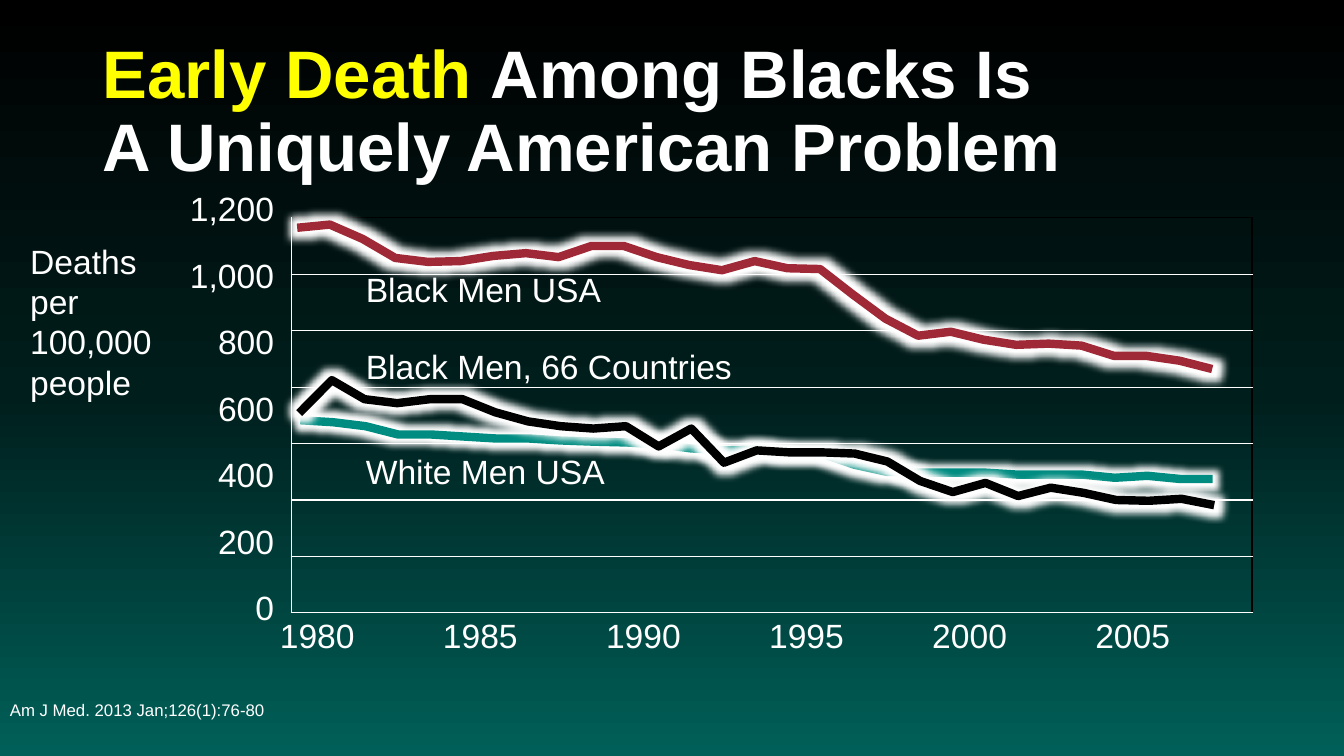
from dataclasses import dataclass
from lxml import etree
from pptx import Presentation
from pptx import util as u
from pptx.dml import color
from pptx.enum import text
from pptx.oxml import ns, parse_xml

Cm, Pt = u.Cm, u.Pt


@dataclass(frozen=True)
class Theme:
    font: str = "Arial"
    white: str = "FFFFFF"
    black: str = "000000"
    accent: str = "FFFF00"
    black_usa: str = "9F2936"
    white_usa: str = "008C81"
    background: tuple = ((0, "000000"), (52, "001E1C"), (100, "006059"))
    title: int = 48
    body: int = 24
    source: int = 12


THEME = Theme()

# Height of each yearly point, 1980 to 2008, in cm from the top of the slide
BLACK_USA = [5.74, 5.66, 6.02, 6.5, 6.6, 6.58, 6.45, 6.38, 6.48, 6.2,
             6.2, 6.48, 6.68, 6.81, 6.58, 6.76, 6.78, 7.42, 8.03, 8.46,
             8.36, 8.56, 8.69, 8.66, 8.71, 8.97, 8.97, 9.09, 9.3]
WHITE_USA = [10.59, 10.64, 10.74, 10.95, 10.95, 11, 11.05, 11.05, 11.1, 11.13,
             11.15, 11.2, 11.3, 11.35, 11.33, 11.43, 11.43, 11.71, 11.89, 11.91,
             11.91, 11.91, 11.96, 11.96, 11.96, 12.04, 11.99, 12.07, 12.07]
BLACK_66 = [10.41, 9.58, 10.06, 10.16, 10.06, 10.06, 10.39, 10.62, 10.74, 10.8,
            10.74, 11.25, 10.8, 11.66, 11.35, 11.4, 11.4, 11.43, 11.63, 12.12,
            12.4, 12.17, 12.5, 12.29, 12.42, 12.6, 12.62, 12.57, 12.73]


def rgb(value):
    return color.RGBColor.from_string(value)


def add_run(paragraph, words, size, tint=THEME.white, bold=False):
    run = paragraph.add_run()
    run.text = words
    run.font.name, run.font.size, run.font.bold = THEME.font, Pt(size), bold
    run.font.color.rgb = rgb(tint)


def paint_background(slide):
    fill = slide.background.fill
    fill.gradient()
    fill.gradient_angle = 270
    stops = slide.element.find(".//" + ns.qn("a:gsLst"))
    for stop in list(stops):
        stops.remove(stop)
    for percent, tint in THEME.background:
        stop = etree.SubElement(stops, ns.qn("a:gs"), pos=str(percent * 1000))
        etree.SubElement(stop, ns.qn("a:srgbClr"), val=tint)


def place_title(slide, left, top, width, height):
    title = slide.shapes.title
    title.left, title.top, title.width, title.height = map(Cm, (left, top, width, height))
    frame = title.text_frame
    frame.word_wrap = True
    frame.auto_size = text.MSO_AUTO_SIZE.NONE
    frame.vertical_anchor = text.MSO_ANCHOR.MIDDLE
    heading = frame.paragraphs[0]
    heading.alignment, heading.line_spacing = text.PP_ALIGN.LEFT, 0.9
    add_run(heading, "Early Death ", THEME.title, THEME.accent, True)
    add_run(heading, "Among Blacks Is", THEME.title, bold=True)
    heading.add_line_break()
    add_run(heading, "A Uniquely American Problem", THEME.title, bold=True)


def add_caption(slide, words, left, top, width, height, size=THEME.body,
                wrap=True, anchor=text.MSO_ANCHOR.TOP):
    frame = slide.shapes.add_textbox(*map(Cm, (left, top, width, height))).text_frame
    frame.word_wrap, frame.vertical_anchor = wrap, anchor
    add_run(frame.paragraphs[0], words, size)


def style_cell(cell, borders):
    """Clear the fill and set borders from a side-to-colour dict; sides left out get none."""
    properties = cell._tc.get_or_add_tcPr()
    for side in "LRTB":
        tint = borders.get(side)
        paint = (f'<a:solidFill><a:srgbClr val="{tint}"/></a:solidFill>'
                 if tint else "<a:noFill/>")
        properties.append(parse_xml(
            f'<a:ln{side} {ns.nsdecls("a")} w="12700">{paint}</a:ln{side}>'))
    cell.fill.background()


def add_plain_table(slide, rows, columns, left, top, width, height):
    table = slide.shapes.add_table(rows, columns, *map(Cm, (left, top, width, height))).table
    table.first_row = table.horz_banding = False
    return table


def add_axis(slide, labels, left, top, width, height, vertical=False):
    rows, columns = (len(labels), 1) if vertical else (1, len(labels))
    axis = add_plain_table(slide, rows, columns, left, top, width, height)
    for cell, label in zip(axis.iter_cells(), labels):
        style_cell(cell, {})
        tick = cell.text_frame.paragraphs[0]
        tick.alignment = text.PP_ALIGN.RIGHT
        add_run(tick, label, THEME.body)


def add_grid(slide, left, top, width, height):
    grid = add_plain_table(slide, 7, 1, left, top, width, height)
    for row, cell in enumerate(grid.iter_cells()):
        style_cell(cell, {"L": THEME.white, "R": THEME.black, "B": THEME.white,
                          "T": THEME.white if row else THEME.black})


def add_trend(slide, heights, tint, left, width):
    """Draw a glowing line with one evenly spaced point per year."""
    step = width / (len(heights) - 1)
    points = [(Cm(left + year * step), Cm(y)) for year, y in enumerate(heights)]
    builder = slide.shapes.build_freeform(*points[0])
    builder.add_line_segments(points[1:], close=False)
    trend = builder.convert_to_shape()
    trend.fill.background()
    trend.line.color.rgb, trend.line.width = rgb(tint), Pt(6)
    trend.shadow.inherit = False
    effects = trend.element.spPr.find(ns.qn("a:effectLst"))
    glow = etree.SubElement(effects, ns.qn("a:glow"), rad=str(Pt(10)))
    etree.SubElement(glow, ns.qn("a:srgbClr"), val=THEME.white)


def add_death_rates(slide, left, top, width, height):
    """Place the axes, grid, trends and their labels around the plot box."""
    years = [str(year) for year in range(1980, 2010, 5)]
    rates = [f"{rate:,}" for rate in range(1200, -1, -200)]
    add_caption(slide, "Deaths per 100,000 people", left - 6.83, top + 0.45, 4.57, 4.37)
    add_axis(slide, years, left - 2.26, top + height, 24.66, 1.27)
    add_axis(slide, rates, left - 3.38, top - 0.79, 3.2, 11.73, vertical=True)
    add_grid(slide, left, top, width, height)
    add_trend(slide, BLACK_USA, THEME.black_usa, left + 0.15, 23.06)
    add_trend(slide, WHITE_USA, THEME.white_usa, left + 0.23, 22.99)
    for words, drop, length in (("Black Men USA", 1.17, 6.5),
                                ("Black Men, 66 Countries", 3.1, 9.83),
                                ("White Men USA", 5.74, 6.6)):
        add_caption(slide, words, left + 1.63, top + drop, length, 1.27, wrap=False)
    add_trend(slide, BLACK_66, THEME.black, left + 0.2, 23.06)


def main():
    deck = Presentation()
    deck.slide_width, deck.slide_height = Cm(33.87), Cm(19.05)
    slide = deck.slides.add_slide(deck.slide_layouts.get_by_name("Title Only"))
    paint_background(slide)
    place_title(slide, 2.33, 1.01, 29.21, 3.68)
    add_caption(slide, "Am J Med. 2013 Jan;126(1):76-80", 0, 16.71, 22.86, 2.34,
                THEME.source, anchor=text.MSO_ANCHOR.MIDDLE)
    add_death_rates(slide, 7.34, 5.49, 24.21, 9.96)
    deck.save("out.pptx")


if __name__ == "__main__":
    main()
